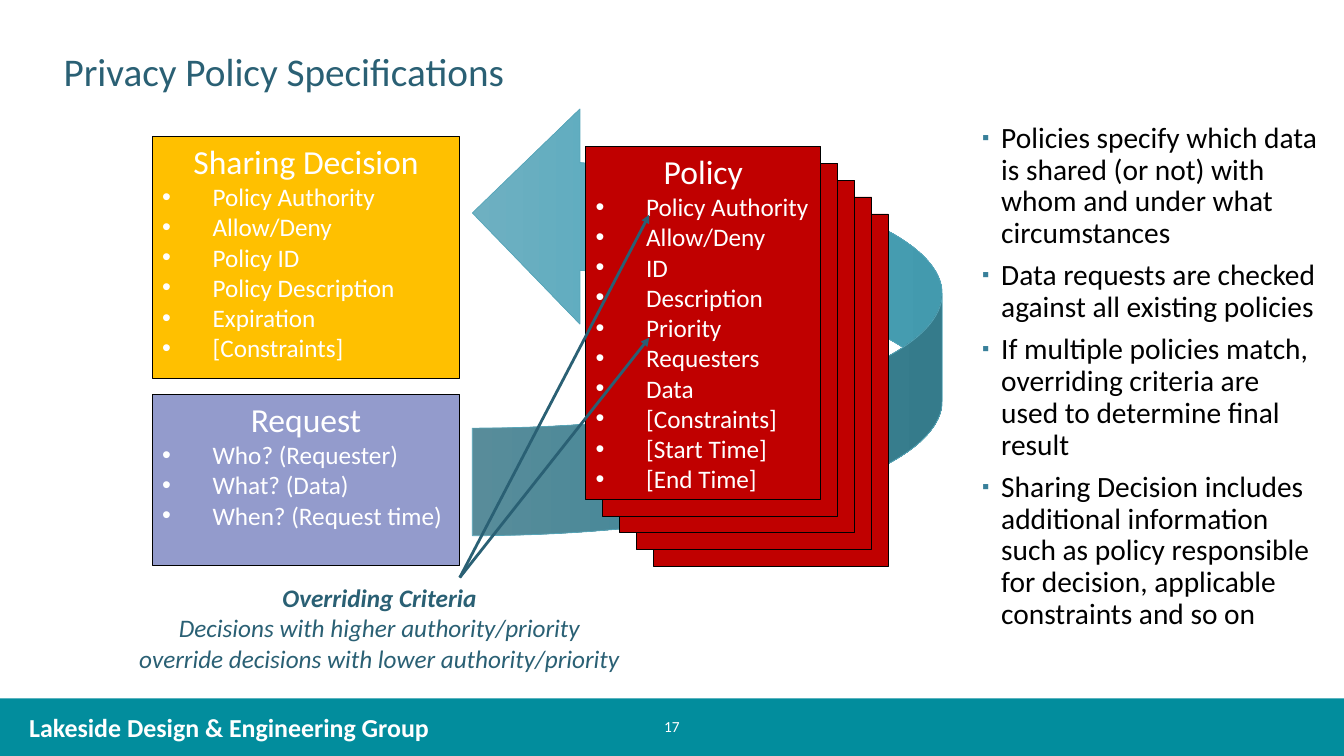
from lxml import etree
from pptx import Presentation
from pptx import util as u
from pptx.dml.color import RGBColor
from pptx.enum import shapes, text
from pptx.oxml import parse_xml
from pptx.oxml.ns import qn

# Content
TITLE = "Privacy Policy Specifications"
COMPANY = "Lakeside Design & Engineering Group"
PAGE = "17"
POLICY = ("Policy", ["Policy Authority", "Allow/Deny", "ID", "Description", "Priority",
                     "Requesters", "Data", "[Constraints]", "[Start Time]", "[End Time]"])
REQUEST = ("Request", ["Who? (Requester)", "What? (Data)", "When? (Request time)"])
DECISION = ("Sharing Decision", ["Policy Authority", "Allow/Deny", "Policy ID",
                                 "Policy Description", "Expiration", "[Constraints]"])
CRITERIA = ["Overriding Criteria",
            "Decisions with higher authority/priority override decisions with lower authority/priority"]
NOTES = [
    "Policies specify which data is shared (or not) with whom and under what circumstances",
    "Data requests are checked against all existing policies",
    "If multiple policies match, overriding criteria are used to determine final result",
    "Sharing Decision includes additional information such as policy responsible for decision, "
    "applicable constraints and so on",
]

# Colours
WHITE = RGBColor(0xFF, 0xFF, 0xFF)
BLACK = RGBColor(0, 0, 0)
TEAL = RGBColor(0x02, 0x8D, 0x9D)
NAVY = RGBColor(0x2A, 0x60, 0x74)
RED = RGBColor(0xC0, 0, 0)
LILAC = RGBColor(0x93, 0x9B, 0xCC)
AMBER = RGBColor(0xFF, 0xC0, 0)
BULLET = RGBColor(0x38, 0x80, 0x9A)
ARROW_LINE = RGBColor(0x57, 0xA6, 0xB9)
ARROW_STOPS = [(0, RGBColor(0x6E, 0xB0, 0xC1)), (50, RGBColor(0x52, 0xA9, 0xBE)),
               (100, RGBColor(0x43, 0x9A, 0xAE))]

# Layout, in percent of the slide's width and height: left, top, width, height
FOOTER_AT = (0, 92.4, 100, 7.6)
COMPANY_AT = (1.43, 93.47, 31.73, 5.33)
PAGE_AT = (47.41, 93.87, 5.18, 4.4)
TITLE_AT = (3.98, 5.33, 89.2, 8.93)
ARROW_AT = (36.61, 11.33, 32.03, 62.13)
DECISION_AT = (11.33, 18, 22.88, 32)
REQUEST_AT = (11.33, 52.13, 22.88, 22.67)
POLICY_AT = (43.59, 19.33, 17.48, 46.67)
CRITERIA_AT = (9.45, 76.4, 37.58, 14.13)
NOTES_AT = (72.32, 15.6, 26.56, 70.8)
STACK, STEP_X, STEP_Y = 5, 1.26, 2.24
POINTER_FROM = (34.21, 76.4)
POINTERS_TO = [(48.31, 28.4), (48.31, 44.67)]

prs = Presentation()
prs.slide_width, prs.slide_height = u.Inches(13.33), u.Inches(7.5)
slide = prs.slides.add_slide(prs.slide_layouts[1])


def emu(at):
    sizes = (prs.slide_width, prs.slide_height) * 2
    return [int(size * share / 100) for size, share in zip(sizes, at)]


def move(sp, at):
    sp.left, sp.top, sp.width, sp.height = emu(at)


def style(p, size, color, bold=False, italic=False, align=text.PP_ALIGN.LEFT):
    p.alignment = align
    for r in p.runs:
        r.font.name, r.font.size = "Calibri", u.Pt(size)
        r.font.color.rgb = color
        r.font.bold, r.font.italic = bold, italic


def bullet(p, char, indent, color=None, percent=100):
    pPr = p._p.get_or_add_pPr()
    pPr.set("marL", str(u.Inches(indent)))
    pPr.set("indent", str(-u.Inches(indent)))
    if color is not None:
        clr = etree.SubElement(pPr, qn("a:buClr"))
        etree.SubElement(clr, qn("a:srgbClr"), val=str(color))
    etree.SubElement(pPr, qn("a:buSzPct"), val=str(percent * 1000))
    etree.SubElement(pPr, qn("a:buFont"), typeface="Arial")
    etree.SubElement(pPr, qn("a:buChar"), char=char)


def add_box(at, fill, line=BLACK, kind=shapes.MSO_SHAPE.RECTANGLE):
    sp = slide.shapes.add_shape(kind, *emu(at))
    sp.shadow.inherit = False
    if fill is not None:
        sp.fill.solid()
        sp.fill.fore_color.rgb = fill
    if line is None:
        sp.line.fill.background()
    else:
        sp.line.color.rgb, sp.line.width = line, u.Pt(0.5)
    return sp


def add_card(at, fill, content):
    heading, items = content
    tf = add_box(at, fill).text_frame
    tf.word_wrap = True
    tf.vertical_anchor = text.MSO_ANCHOR.TOP
    tf.text = "\n".join([heading] + items)
    style(tf.paragraphs[0], 24, WHITE, align=text.PP_ALIGN.CENTER)
    for p in tf.paragraphs[1:]:
        bullet(p, "•", 0.5)
        style(p, 18, WHITE)


def add_label(at, lines, wrap=True):
    tf = slide.shapes.add_textbox(*emu(at)).text_frame
    tf.word_wrap = wrap
    tf.text = "\n".join(lines)
    return tf


# Footer band with company and page number
add_box(FOOTER_AT, TEAL, None)
style(add_label(COMPANY_AT, [COMPANY], False).paragraphs[0], 18.5, WHITE, bold=True)
page = add_label(PAGE_AT, [PAGE])
page.vertical_anchor = text.MSO_ANCHOR.MIDDLE
style(page.paragraphs[0], 11, WHITE, align=text.PP_ALIGN.CENTER)

# Title
title = slide.shapes.title
move(title, TITLE_AT)
title.text_frame.text = TITLE
title.text_frame.vertical_anchor = text.MSO_ANCHOR.MIDDLE
title.text_frame.paragraphs[0].line_spacing = 0.9
style(title.text_frame.paragraphs[0], 28, NAVY)

# Curved arrow from request to decision
arrow = add_box(ARROW_AT, None, ARROW_LINE, shapes.MSO_SHAPE.CURVED_UP_ARROW)
arrow.rotation = 270
stops = "".join(f'<a:gs pos="{pos * 1000}"><a:srgbClr val="{color}"/></a:gs>'
                for pos, color in ARROW_STOPS)
arrow._element.spPr.find(qn("a:prstGeom")).addnext(parse_xml(
    '<a:gradFill xmlns:a="http://schemas.openxmlformats.org/drawingml/2006/main" rotWithShape="1">'
    f'<a:gsLst>{stops}</a:gsLst><a:lin ang="5400000" scaled="0"/></a:gradFill>'))

# Stack of policies, then the two cards on the left
left, top, width, height = POLICY_AT
for n in range(STACK - 1, 0, -1):
    add_box((left + n * STEP_X, top + n * STEP_Y, width, height), RED)
add_card(POLICY_AT, RED, POLICY)
add_card(REQUEST_AT, LILAC, REQUEST)
add_card(DECISION_AT, AMBER, DECISION)

# Overriding criteria and its pointers
criteria = add_label(CRITERIA_AT, CRITERIA)
for p, bold in zip(criteria.paragraphs, (True, False)):
    style(p, 18, NAVY, bold, True, text.PP_ALIGN.CENTER)
for target in POINTERS_TO:
    pointer = slide.shapes.add_connector(shapes.MSO_CONNECTOR.STRAIGHT, *emu(POINTER_FROM + target))
    pointer.line.color.rgb, pointer.line.width = NAVY, u.Pt(2)
    etree.SubElement(pointer.line._get_or_add_ln(), qn("a:tailEnd"), type="triangle")
    etree.SubElement(pointer._element.spPr, qn("a:effectLst"))

# Notes on the right
body = slide.placeholders[1]
move(body, NOTES_AT)
body.text_frame.text = "\n".join(NOTES)
for n, p in enumerate(body.text_frame.paragraphs):
    p.line_spacing = 0.9
    p.space_before = u.Pt(7.5 if n else 0)
    bullet(p, "▪", 0.19, BULLET, 70)
    style(p, 21, BLACK)

prs.save("out.pptx")
